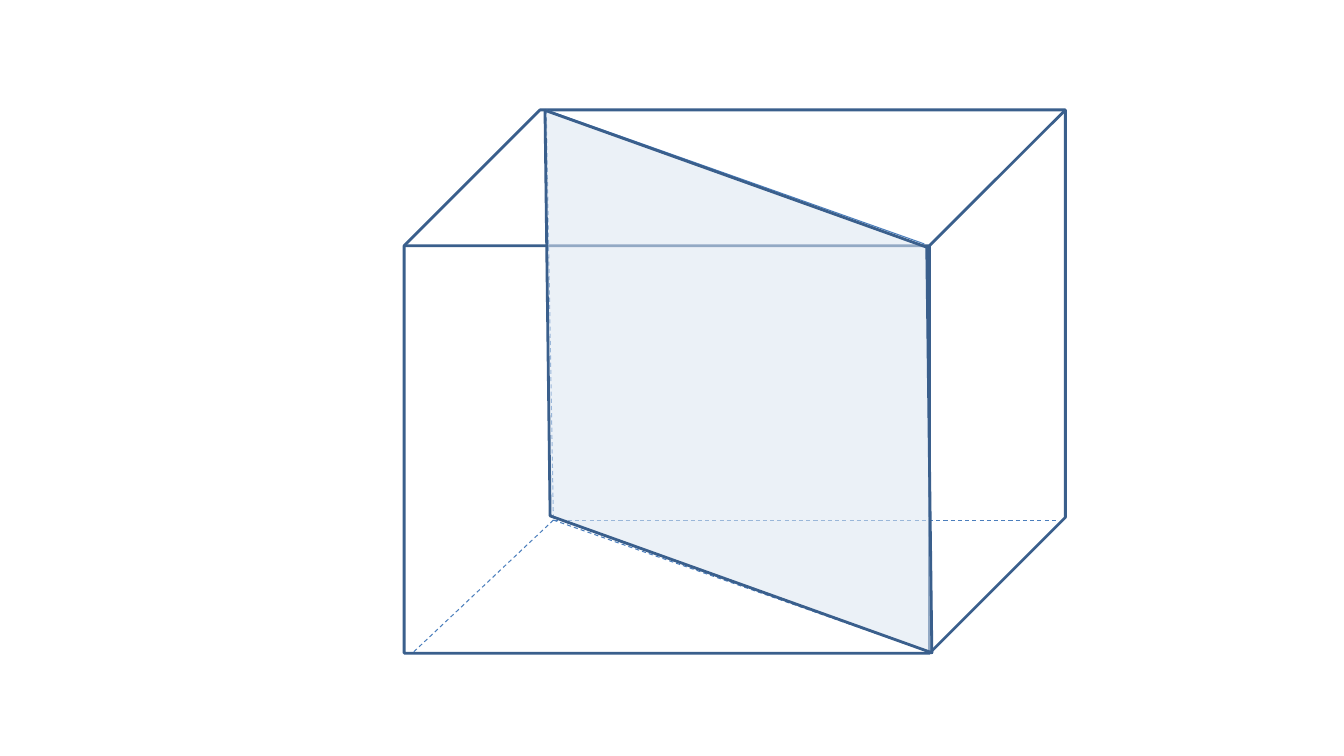
from lxml.etree import SubElement
from pptx import Presentation
from pptx.dml.color import RGBColor
from pptx.enum.dml import MSO_LINE
from pptx.enum.shapes import MSO_CONNECTOR, MSO_SHAPE
from pptx.oxml.ns import qn
from pptx.util import Pt

EDGE = RGBColor(0x3A, 0x5F, 0x8C)
HIDDEN = RGBColor(0x4B, 0x7E, 0xBC)
PLANE = RGBColor(0xDC, 0xE6, 0xF2)

deck = Presentation()
deck.slide_width, deck.slide_height = Pt(960), Pt(540)
slide = deck.slides.add_slide(deck.slide_layouts[6])
shapes = slide.shapes


def add_solid(kind, *box):
    solid = shapes.add_shape(kind, *map(Pt, box))
    solid.shadow.inherit = False
    solid.line.color.rgb = EDGE
    solid.line.width = Pt(2)
    return solid


cube = add_solid(MSO_SHAPE.CUBE, 288.7, 78.5, 472.3, 388.1)
cube.fill.background()

# Corners of the cube joined by the thin lines
back_top = (390.2, 78.5)
back_low = (395.3, 371.5)
right_low = (755.3, 371.5)
left_low = (294.5, 466.6)
front_top = (660.2, 174.2)
front_low = (666, 466.6)

lines = [
    (back_top, back_low, True),
    (back_low, right_low, True),
    (back_low, left_low, True),
    (back_top, front_top, False),
    (back_low, front_low, True),
]
for start, end, dashed in lines:
    edge = shapes.add_connector(MSO_CONNECTOR.STRAIGHT, *map(Pt, start + end))
    edge.line.color.rgb = HIDDEN
    edge.line.width = Pt(0.75)
    if dashed:
        edge.line.dash_style = MSO_LINE.DASH
    SubElement(edge.element.spPr, qn("a:effectLst"))

# Diagonal section through the cube
plane = add_solid(MSO_SHAPE.DIAMOND, 362.2, 34.6, 330.5, 475.9)
plane.rotation = 324.5
plane.fill.solid()
plane.fill.fore_color.rgb = PLANE
tint = plane.element.spPr.find(qn("a:solidFill")).find(qn("a:srgbClr"))
SubElement(tint, qn("a:alpha"), val="55000")

deck.save("out.pptx")
